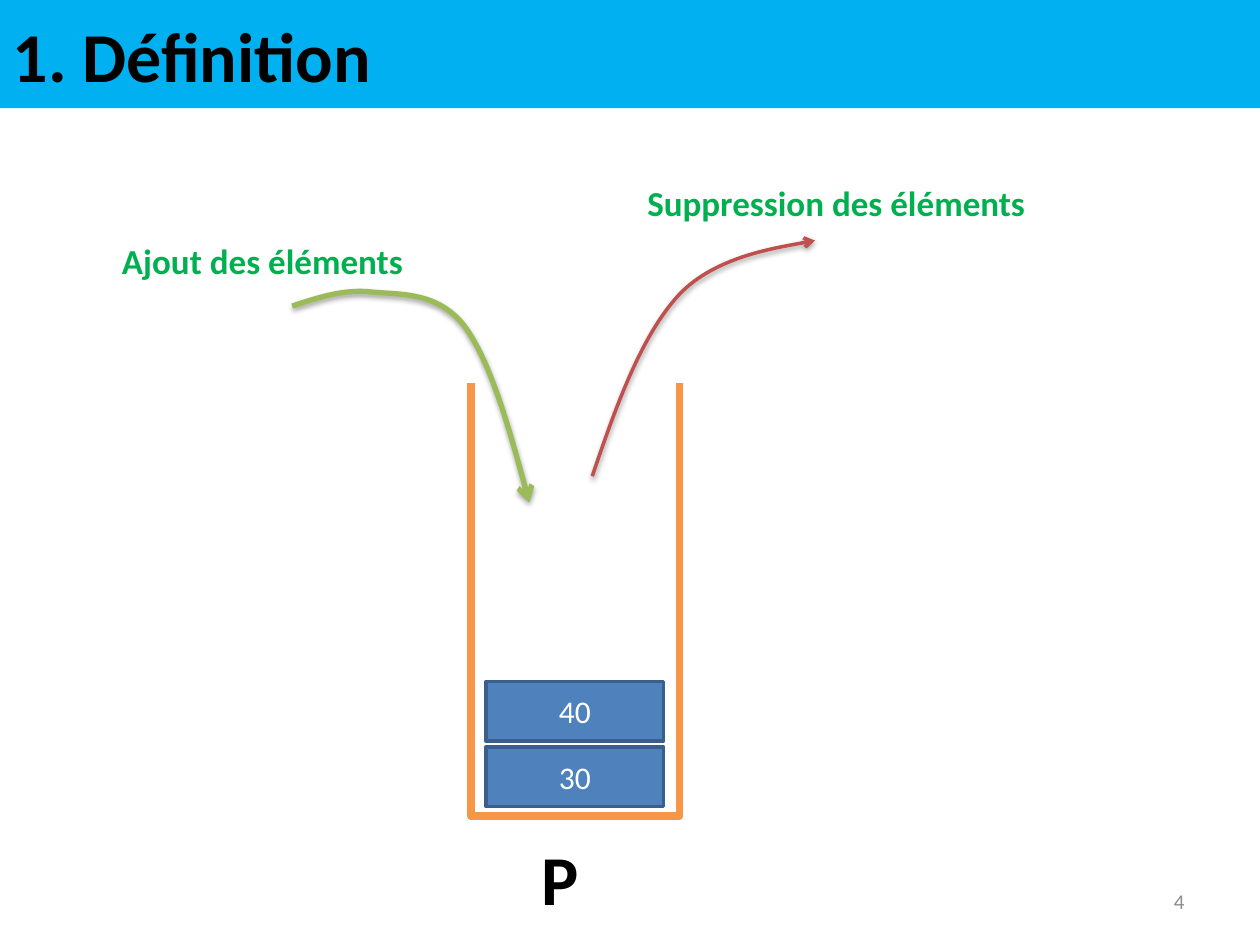
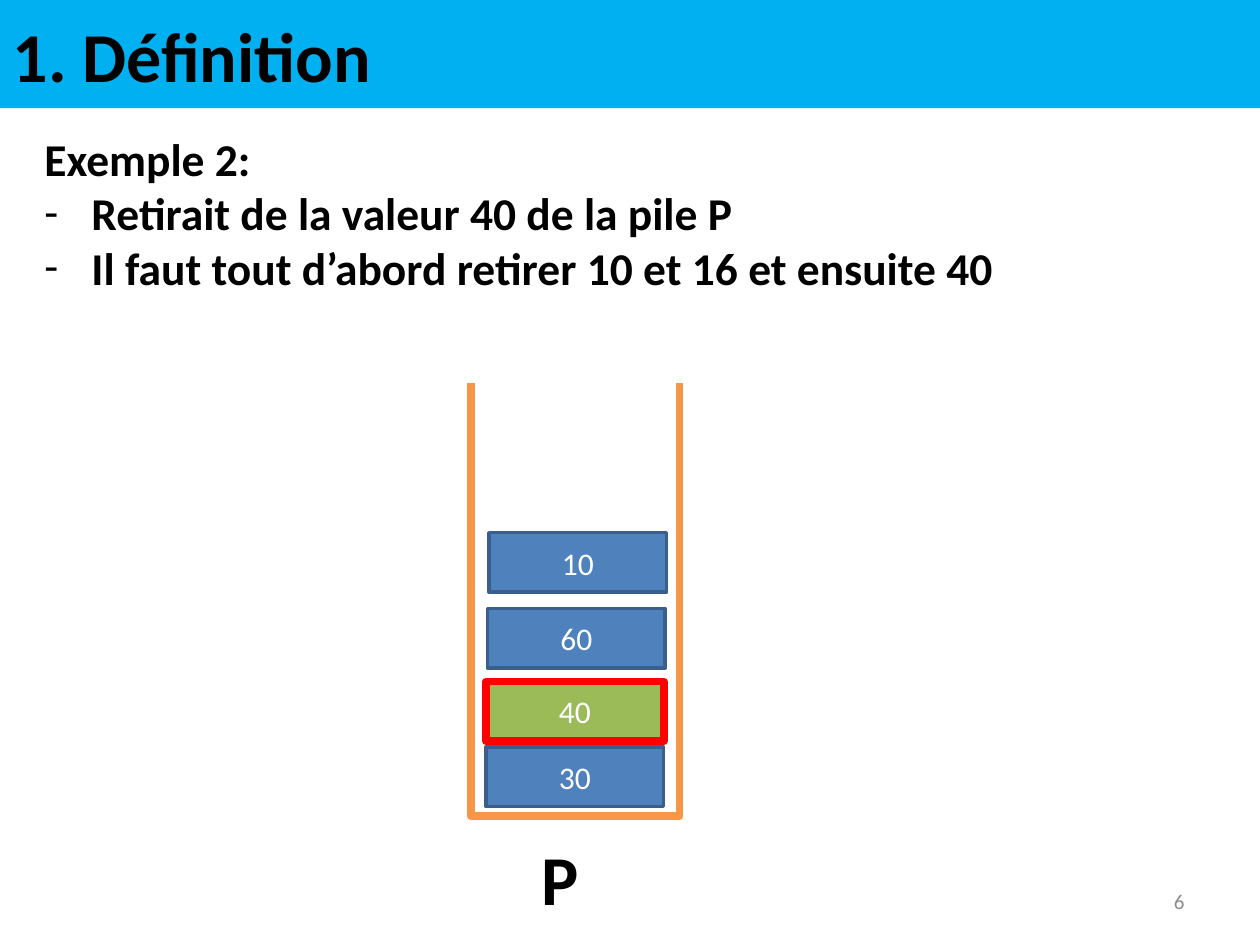
"""Build two slides that explain how a stack (pile) works."""
from dataclasses import dataclass

from lxml import etree
from pptx import Presentation
from pptx import util as u
from pptx.dml.color import RGBColor
from pptx.enum import shapes, text
from pptx.oxml.ns import qn


@dataclass(frozen=True)
class Theme:
    font: str = "Calibri"
    band: str = "00B0F0"
    ink: str = "000000"
    paper: str = "FFFFFF"
    label: str = "00B050"
    number: str = "8C8C8C"
    pile: str = "F79646"
    value: str = "4F81BD"
    value_edge: str = "3A5F8C"
    green: str = "9BBB59"
    red: str = "C0504D"
    alert: str = "FF0000"
    title_size: int = 40
    body_size: int = 26
    label_size: int = 20
    value_size: int = 18
    number_size: int = 12


LOWER_VALUES = {"30": (9.8, 15.06), "40": (9.8, 13.74)}
UPPER_VALUES = {"60": (9.83, 12.27), "10": (9.86, 10.74)}
PUSH_CURVE = [(5.89, 6.17), (6.43, 5.99), (6.96, 5.82), (7.52, 5.89), (8.1, 5.94),
              (8.84, 5.89), (9.37, 6.58), (9.88, 7.29), (10.29, 8.71), (10.67, 10.13)]
POP_CURVE = [(11.94, 9.6), (12.42, 8.18), (12.93, 6.76), (13.69, 5.94),
             (14.43, 5.16), (16.43, 4.85), (16.43, 4.85)]


def cm(*lengths):
    return [u.Cm(length) for length in lengths]


def add_xml(parent, tag, **attributes):
    return etree.SubElement(parent, qn(tag), attributes)


class PileDeck:
    def __init__(self, theme):
        self.theme = theme
        self.deck = Presentation()
        self.deck.slide_width, self.deck.slide_height = cm(25.4, 19.05)
        self.page = None

    def style(self, para, size, color, bold=False, align=text.PP_ALIGN.LEFT):
        para.alignment = align
        for span in para.runs:
            span.font.name = self.theme.font
            span.font.size = u.Pt(size)
            span.font.bold = bold
            span.font.color.rgb = RGBColor.from_string(color)

    def place(self, holder, left, top, width, height):
        holder.left, holder.top, holder.width, holder.height = cm(left, top, width, height)
        holder.text_frame.auto_size = text.MSO_AUTO_SIZE.NONE

    def start_page(self, layout, title, number):
        self.page = self.deck.slides.add_slide(self.deck.slide_layouts[layout])
        band = self.page.shapes.title
        self.place(band, 0, 0, 25.4, 2.18)
        band.fill.solid()
        band.fill.fore_color.rgb = RGBColor.from_string(self.theme.band)
        band.text_frame.text = title
        self.style(band.text_frame.paragraphs[0], self.theme.title_size, self.theme.ink, True)
        footer = self.label(number, (18.21, 17.65, 5.92, 1.02), self.theme.number_size,
                            self.theme.number, align=text.PP_ALIGN.RIGHT)
        footer.text_frame.vertical_anchor = text.MSO_ANCHOR.MIDDLE

    def label(self, words, bounds, size, color, bold=False,
              align=text.PP_ALIGN.LEFT, wrap=True, parent=None):
        box = (parent or self.page).shapes.add_textbox(*cm(*bounds))
        box.text_frame.word_wrap = wrap
        box.text_frame.text = words
        self.style(box.text_frame.paragraphs[0], size, color, bold, align)
        return box

    def rectangle(self, bounds, fill, edge=None, weight=0, parent=None):
        box = (parent or self.page).shapes.add_shape(
            shapes.MSO_SHAPE.RECTANGLE, *cm(*bounds))
        box.fill.solid()
        box.fill.fore_color.rgb = RGBColor.from_string(fill)
        if edge:
            box.line.color.rgb = RGBColor.from_string(edge)
            box.line.width = u.Pt(weight)
        else:
            box.line.fill.background()
        box.shadow.inherit = False
        return box

    def pile(self, name):
        theme = self.theme
        group = self.page.shapes.add_group_shape()
        self.rectangle((9.5, 7.52, 4.2, 8.94), theme.paper, theme.pile, 4.5, group)
        self.label(name, (10.67, 16.71, 1.27, 1.96), theme.title_size, theme.ink,
                   bold=True, wrap=False, parent=group)
        self.rectangle((8.51, 6.73, 5.59, 0.99), theme.paper, parent=group)

    def values(self, positions, chosen=None):
        theme = self.theme
        for value, (left, top) in positions.items():
            look = ((theme.green, theme.alert, 4.5) if value == chosen
                    else (theme.value, theme.value_edge, 2))
            box = self.rectangle((left, top, 3.58, 1.2), *look)
            box.text_frame.vertical_anchor = text.MSO_ANCHOR.MIDDLE
            box.text_frame.text = value
            self.style(box.text_frame.paragraphs[0], theme.value_size, theme.paper,
                       align=text.PP_ALIGN.CENTER)

    def curved_arrow(self, points, color, weight):
        start, *others = [cm(*point) for point in points]
        builder = self.page.shapes.build_freeform(*start)
        builder.add_line_segments(others, close=False)
        arrow = builder.convert_to_shape()
        arrow.fill.background()
        arrow.line.color.rgb = RGBColor.from_string(color)
        arrow.line.width = u.Pt(weight)
        arrow.shadow.inherit = False
        properties = arrow.element.spPr
        segments = list(properties.iter(qn("a:lnTo")))
        for first in range(0, len(segments), 3):
            curve = add_xml(segments[first].getparent(), "a:cubicBezTo")
            for segment in segments[first:first + 3]:
                curve.append(segment[0])
                segment.getparent().remove(segment)
        add_xml(properties.find(qn("a:ln")), "a:tailEnd", type="arrow")
        shadow = add_xml(properties.find(qn("a:effectLst")), "a:outerShdw",
                         blurRad=str(u.Pt(3.1)), dist=str(u.Pt(1.7)),
                         dir="5400000", rotWithShape="0")
        shade = add_xml(shadow, "a:srgbClr", val=self.theme.ink)
        add_xml(shade, "a:alpha", val="36000")

    def body(self, heading, items):
        holder = self.page.placeholders[1]
        self.place(holder, 0.64, 2.51, 22.61, 3.58)
        holder.text_frame.text = "\n".join([heading, *items])
        for index, para in enumerate(holder.text_frame.paragraphs):
            indent = u.Cm(0.95) if index else 0
            properties = para._p.get_or_add_pPr()
            properties.set("marL", str(indent))
            properties.set("indent", str(-indent))
            if index:
                add_xml(properties, "a:buFont", typeface=self.theme.font)
                add_xml(properties, "a:buChar", char="-")
            else:
                add_xml(properties, "a:buNone")
            para.space_before = u.Pt(0)
            self.style(para, self.theme.body_size, self.theme.ink, True)


def main():
    theme = Theme()
    builder = PileDeck(theme)

    builder.start_page(5, "1. Définition", "4")
    builder.pile("P")
    builder.curved_arrow(PUSH_CURVE, theme.green, 3)
    builder.curved_arrow(POP_CURVE, theme.red, 2)
    builder.values(LOWER_VALUES)
    for words, bounds in (("Ajout des éléments", (2.21, 4.7, 7.29, 1.12)),
                          ("Suppression des éléments", (12.8, 3.53, 10.31, 1.12))):
        builder.label(words, bounds, theme.label_size, theme.label, bold=True)

    builder.start_page(1, "1. Définition", "6")
    builder.pile("P")
    builder.values(LOWER_VALUES | UPPER_VALUES, chosen="40")
    builder.body("Exemple 2:", ["Retirait de la valeur 40 de la pile P",
                                "Il faut tout d’abord retirer 10 et 16 et ensuite 40"])

    builder.deck.save("out.pptx")


if __name__ == "__main__":
    main()
